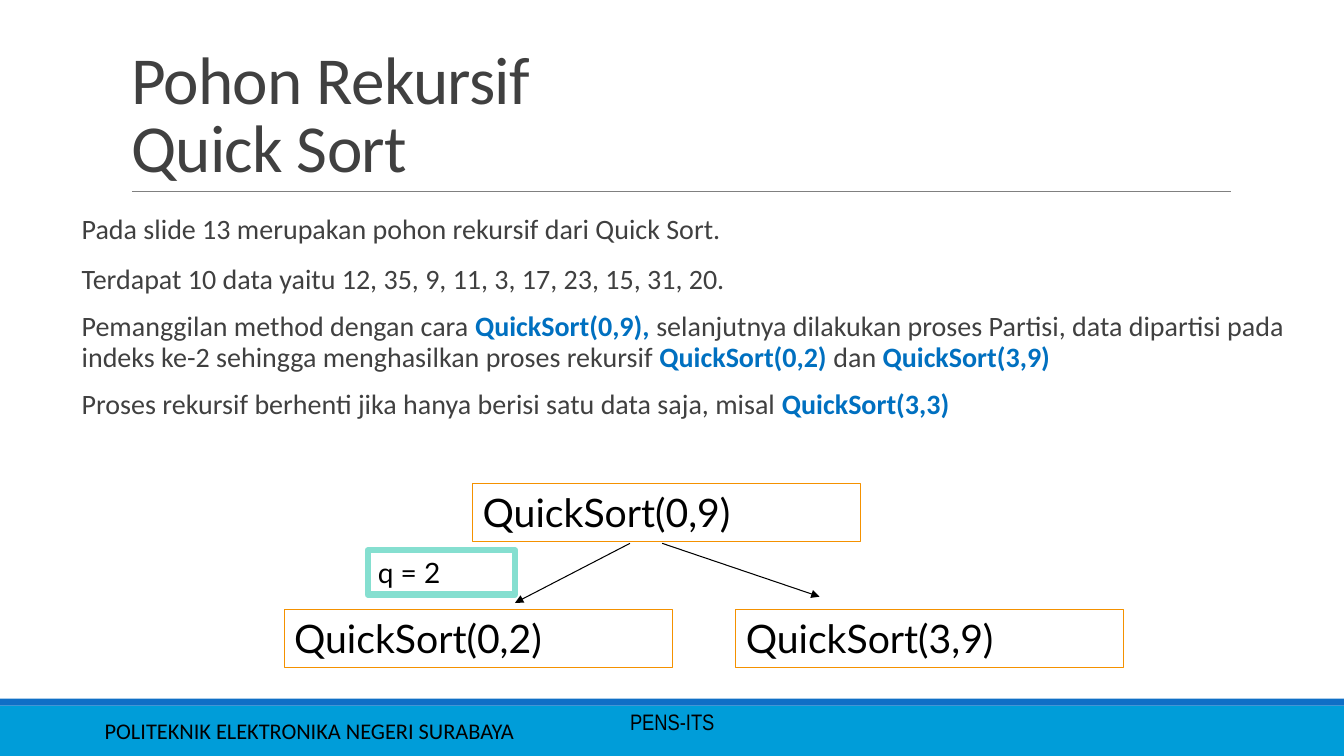
from dataclasses import dataclass
from typing import Any, Optional

from lxml import etree
from pptx import Presentation
from pptx import util as u
from pptx.dml.color import RGBColor
from pptx.enum import shapes as sh, text as tx
from pptx.oxml import ns

Pt = u.Pt
BLACK = RGBColor(0x00, 0x00, 0x00)
WHITE = RGBColor(0xFF, 0xFF, 0xFF)
DARK = RGBColor(0x40, 0x40, 0x40)
GRAY = RGBColor(0x80, 0x80, 0x80)
LINK = RGBColor(0x00, 0x70, 0xC0)
SKY = RGBColor(0x00, 0x9D, 0xD9)
NAVY = RGBColor(0x0F, 0x6F, 0xC6)
GOLD = RGBColor(0xF4, 0x91, 0x00)
MINT = RGBColor(0x85, 0xDF, 0xD0)


@dataclass
class Box:
    left: float
    top: float
    width: float
    height: float
    fill: Optional[RGBColor] = None
    line: Optional[RGBColor] = None
    weight: float = 0.75
    label: str = ""
    size: float = 28


@dataclass
class Line:
    x1: float
    y1: float
    x2: float
    y2: float
    color: RGBColor = BLACK
    weight: float = 0.75
    arrow: bool = True


@dataclass
class Note:
    left: float
    top: float
    width: float
    height: float
    label: str
    face: str
    align: Any


BANDS = [Box(0, 504, 960, 36, SKY), Box(0, 499, 960, 5, NAVY)]
RULE = Line(94.3, 136.8, 879.1, 136.8, GRAY, 0.5, False)
NOTES = [
    Note(67.7, 507.6, 605.5, 28.8, "POLITEKNIK ELEKTRONIKA NEGERI SURABAYA",
         "Calibri", tx.PP_ALIGN.LEFT),
    Note(328.3, 496.8, 303.8, 37.4, "PENS-ITS", "Arial Narrow", tx.PP_ALIGN.CENTER),
]
NODES = [
    Box(337.7, 345.6, 277.2, 41, line=GOLD, label="QuickSort(0,9)"),
    Box(203, 435.6, 277.2, 41, line=GOLD, label="QuickSort(0,2)"),
    Box(525.6, 435.6, 277.2, 41, line=GOLD, label="QuickSort(3,9)"),
    Box(262.8, 393.1, 105.1, 31.7, line=MINT, weight=4.5, label="q = 2", size=20),
]
ARROWS = [Line(450, 388.1, 367.9, 430.6), Line(473, 388.1, 585.4, 426.2)]

# Every second piece of a body line is a bold call
BODY = [
    (0, ["Pada slide 13 merupakan pohon rekursif dari Quick Sort."]),
    (12, ["Terdapat 10 data yaitu 12, 35, 9, 11, 3, 17, 23, 15, 31, 20."]),
    (10, ["Pemanggilan method dengan cara ", "QuickSort(0,9), ",
          "selanjutnya dilakukan proses Partisi, data dipartisi pada "
          "indeks ke-2 sehingga menghasilkan proses rekursif ",
          "QuickSort(0,2) ", "dan ", "QuickSort(3,9)"]),
    (10, ["Proses rekursif berhenti jika hanya berisi satu data saja, misal ",
          "QuickSort(3,3)"]),
]


def apply(item: Any, form: dict[str, Any]) -> None:
    for key, value in form.items():
        setattr(item, key, value)


def place(item: Any, left: float, top: float, width: float, height: float) -> None:
    apply(item, dict(left=Pt(left), top=Pt(top), width=Pt(width), height=Pt(height)))


def write(para: Any, words: str, face: str, size: float, color: RGBColor,
          bold: bool = False) -> Any:
    run = para.add_run()
    run.text = words
    apply(run.font, dict(name=face, size=Pt(size), bold=bold))
    run.font.color.rgb = color
    return run


def draw_box(slide: Any, box: Box) -> None:
    shape = slide.shapes.add_shape(sh.MSO_SHAPE.RECTANGLE, Pt(box.left), Pt(box.top),
                                   Pt(box.width), Pt(box.height))
    shape.shadow.inherit = False
    if box.fill is None:
        shape.fill.background()
    else:
        shape.fill.solid()
        shape.fill.fore_color.rgb = box.fill
    if box.line is None:
        shape.line.fill.background()
    else:
        shape.line.color.rgb = box.line
        shape.line.width = Pt(box.weight)
    if box.label:
        frame = shape.text_frame
        apply(frame, dict(word_wrap=True, vertical_anchor=tx.MSO_ANCHOR.TOP,
                          auto_size=tx.MSO_AUTO_SIZE.SHAPE_TO_FIT_TEXT))
        para = frame.paragraphs[0]
        para.alignment = tx.PP_ALIGN.LEFT
        write(para, box.label, "Lato", box.size, BLACK)


def draw_line(slide: Any, line: Line) -> None:
    link = slide.shapes.add_connector(sh.MSO_CONNECTOR.STRAIGHT, Pt(line.x1), Pt(line.y1),
                                      Pt(line.x2), Pt(line.y2))
    link.line.color.rgb = line.color
    link.line.width = Pt(line.weight)
    if line.arrow:
        etree.SubElement(link.line._get_or_add_ln(), ns.qn("a:tailEnd"), type="triangle")
    etree.SubElement(link._element.spPr, ns.qn("a:effectLst"))


def draw_note(slide: Any, note: Note) -> None:
    area = slide.shapes.add_textbox(Pt(note.left), Pt(note.top), Pt(note.width),
                                    Pt(note.height))
    apply(area.text_frame, dict(word_wrap=True, vertical_anchor=tx.MSO_ANCHOR.MIDDLE))
    para = area.text_frame.paragraphs[0]
    para.alignment = note.align
    write(para, note.label, note.face, 16, BLACK)


def fill_title(title: Any) -> None:
    place(title, 86.4, 22.3, 792, 114.5)
    apply(title.text_frame, dict(word_wrap=True, vertical_anchor=tx.MSO_ANCHOR.BOTTOM,
                                 auto_size=tx.MSO_AUTO_SIZE.NONE))
    para = title.text_frame.paragraphs[0]
    apply(para, dict(alignment=tx.PP_ALIGN.LEFT, line_spacing=0.85, space_before=Pt(0)))
    for i, words in enumerate(["Pohon Rekursif", "Quick Sort"]):
        if i:
            para.add_line_break()
        run = write(para, words, "Calibri", 48, DARK)
        run.font._element.set("spc", "-50")


def fill_body(body: Any) -> None:
    place(body, 51.1, 150.5, 882.7, 185.8)
    frame = body.text_frame
    apply(frame, dict(word_wrap=True, vertical_anchor=tx.MSO_ANCHOR.TOP,
                      auto_size=tx.MSO_AUTO_SIZE.NONE, margin_left=0, margin_right=0))
    for i, (gap, parts) in enumerate(BODY):
        para = frame.add_paragraph() if i else frame.paragraphs[0]
        props = para._p.get_or_add_pPr()
        apply(para, dict(alignment=tx.PP_ALIGN.LEFT, line_spacing=0.9,
                         space_before=Pt(gap), space_after=Pt(2)))
        props.set("marL", str(Pt(7.2)))
        props.set("indent", "0")
        etree.SubElement(props, ns.qn("a:buNone"))
        for j, words in enumerate(parts):
            call = j % 2 == 1
            write(para, words, "Calibri", 20, LINK if call else DARK, call)


def main() -> None:
    deck = Presentation()
    apply(deck, dict(slide_width=Pt(960), slide_height=Pt(540)))
    slide = deck.slides.add_slide(deck.slide_layouts[1])
    slide.background.fill.solid()
    slide.background.fill.fore_color.rgb = WHITE

    # Footer bands and title rule
    for band in BANDS:
        draw_box(slide, band)
    draw_line(slide, RULE)
    for note in NOTES:
        draw_note(slide, note)

    # Title and body
    fill_title(slide.shapes.title)
    fill_body(slide.placeholders[1])

    # Call tree
    for node in NODES:
        draw_box(slide, node)
    for arrow in ARROWS:
        draw_line(slide, arrow)
    deck.save("out.pptx")


if __name__ == "__main__":
    main()
